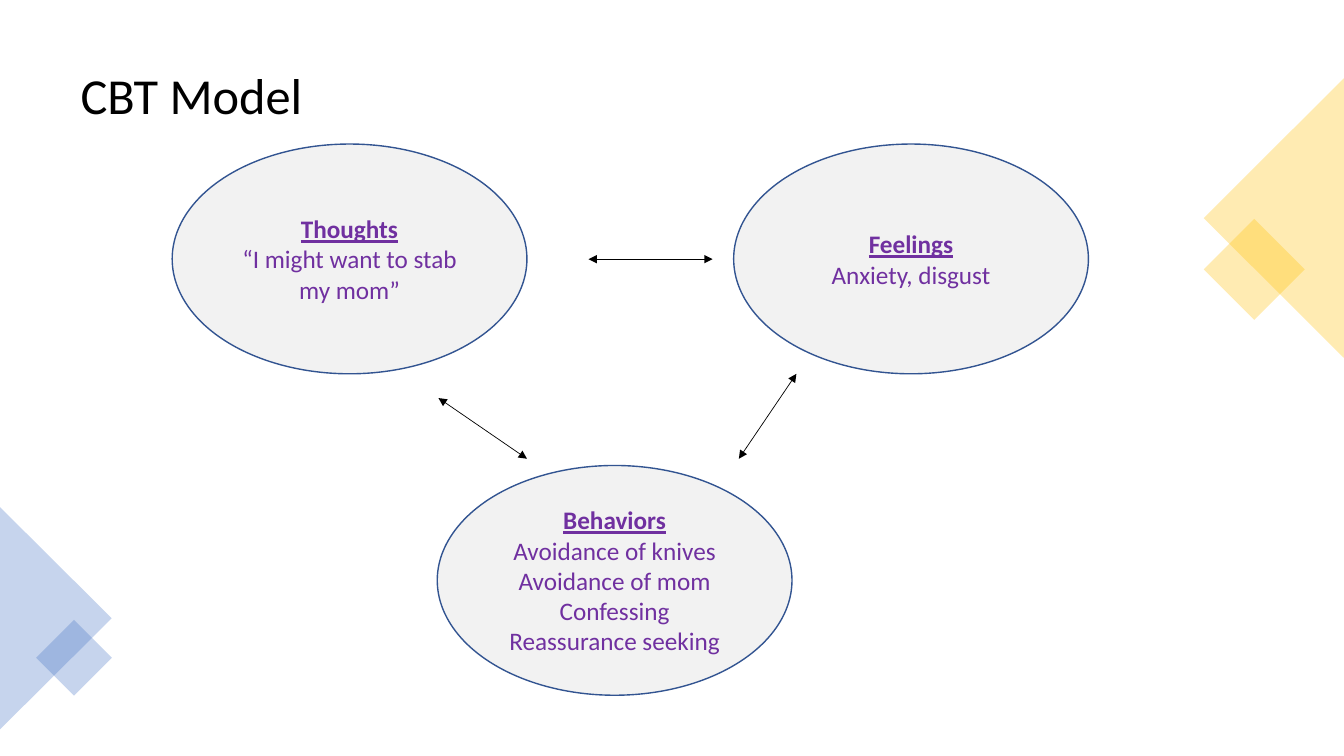
from dataclasses import dataclass

from lxml import etree
from pptx import Presentation
from pptx.dml.color import RGBColor
from pptx.enum import shapes, text
from pptx.oxml import ns
from pptx.util import Cm, Pt

FONT = "Calibri"
COLORS = {
    "title": "000000",
    "arrow": "000000",
    "gold": "FFC000",
    "blue": "4472C4",
    "oval": "F2F2F2",
    "outline": "325491",
    "label": "7030A0",
}
OVAL_W, OVAL_H = 8.94, 5.79
SHAPE = shapes.MSO_SHAPE


@dataclass
class Decoration:
    kind: int
    left: float
    top: float
    width: float
    height: float
    rotation: float
    color: str


@dataclass
class Oval:
    left: float
    top: float
    heading: str
    lines: list[str]


@dataclass
class Arrow:
    x1: float
    y1: float
    x2: float
    y2: float


DECORATIONS = [
    Decoration(SHAPE.RECTANGLE, 30.71, 5.89, 1.8, 1.8, 45, "gold"),
    Decoration(SHAPE.ISOSCELES_TRIANGLE, 28.58, 3.73, 7.04, 3.53, 270, "gold"),
    Decoration(SHAPE.ISOSCELES_TRIANGLE, -1.4, 14.17, 5.61, 2.82, 90, "blue"),
    Decoration(SHAPE.RECTANGLE, 1.19, 15.9, 1.35, 1.35, 45, "blue"),
]
OVALS = [
    Oval(4.34, 3.63, "Thoughts", ["“I might want to stab my mom”"]),
    Oval(11.02, 11.73, "Behaviors", ["Avoidance of knives", "Avoidance of mom",
                                     "Confessing", "Reassurance seeking"]),
    Oval(18.49, 3.63, "Feelings", ["Anxiety, disgust"]),
]
ARROWS = [
    Arrow(14.83, 6.53, 17.96, 6.53),
    Arrow(11.05, 10.03, 13.28, 11.56),
    Arrow(20.07, 9.42, 18.62, 11.56),
]


def rgb(name: str) -> RGBColor:
    return RGBColor.from_string(COLORS[name])


def style_font(font, size: float, color: str) -> None:
    font.name = FONT
    font.size = Pt(size)
    font.color.rgb = rgb(color)


def add_title(s, title: str) -> None:
    tf = s.shapes.add_textbox(Cm(1.78), Cm(0.89), Cm(30.3), Cm(3.15)).text_frame
    tf.word_wrap = True
    tf.vertical_anchor = text.MSO_ANCHOR.MIDDLE
    tf.text = title
    p = tf.paragraphs[0]
    p.line_spacing = 0.9
    style_font(p.runs[0].font, 36, "title")


def add_decoration(s, d: Decoration) -> None:
    sp = s.shapes.add_shape(d.kind, Cm(d.left), Cm(d.top), Cm(d.width), Cm(d.height))
    sp.shadow.inherit = False
    sp.rotation = d.rotation
    sp.fill.solid()
    sp.fill.fore_color.rgb = rgb(d.color)
    sp.line.fill.background()
    fill_color = sp.fill._xPr.find(".//" + ns.qn("a:srgbClr"))
    etree.SubElement(fill_color, ns.qn("a:alpha"), val="30000")


def add_oval(s, oval: Oval) -> None:
    sp = s.shapes.add_shape(SHAPE.OVAL, Cm(oval.left), Cm(oval.top),
                            Cm(OVAL_W), Cm(OVAL_H))
    sp.shadow.inherit = False
    sp.fill.solid()
    sp.fill.fore_color.rgb = rgb("oval")
    sp.line.color.rgb = rgb("outline")
    sp.line.width = Pt(1)
    tf = sp.text_frame
    tf.word_wrap = True
    tf.vertical_anchor = text.MSO_ANCHOR.MIDDLE
    tf.text = "\n".join([oval.heading, *oval.lines])
    for i, p in enumerate(tf.paragraphs):
        p.alignment = text.PP_ALIGN.CENTER
        font = p.runs[0].font
        style_font(font, 18, "label")
        font.bold = font.underline = i == 0


def add_arrow(s, a: Arrow) -> None:
    """Draw a straight line with an arrowhead at both ends."""
    line = s.shapes.add_connector(shapes.MSO_CONNECTOR.STRAIGHT,
                                  Cm(a.x1), Cm(a.y1), Cm(a.x2), Cm(a.y2))
    line.line.color.rgb = rgb("arrow")
    line.line.width = Pt(0.5)
    ln = line.line._get_or_add_ln()
    for end in ("a:headEnd", "a:tailEnd"):
        etree.SubElement(ln, ns.qn(end), type="triangle")
    etree.SubElement(line._element.spPr, ns.qn("a:effectLst"))


def main() -> None:
    prs = Presentation()
    prs.slide_width, prs.slide_height = Cm(33.87), Cm(19.05)
    s = prs.slides.add_slide(prs.slide_layouts[6])
    add_title(s, "CBT Model")
    for decoration in DECORATIONS:
        add_decoration(s, decoration)
    for oval in OVALS:
        add_oval(s, oval)
    for arrow in ARROWS:
        add_arrow(s, arrow)
    prs.save("out.pptx")


if __name__ == "__main__":
    main()
